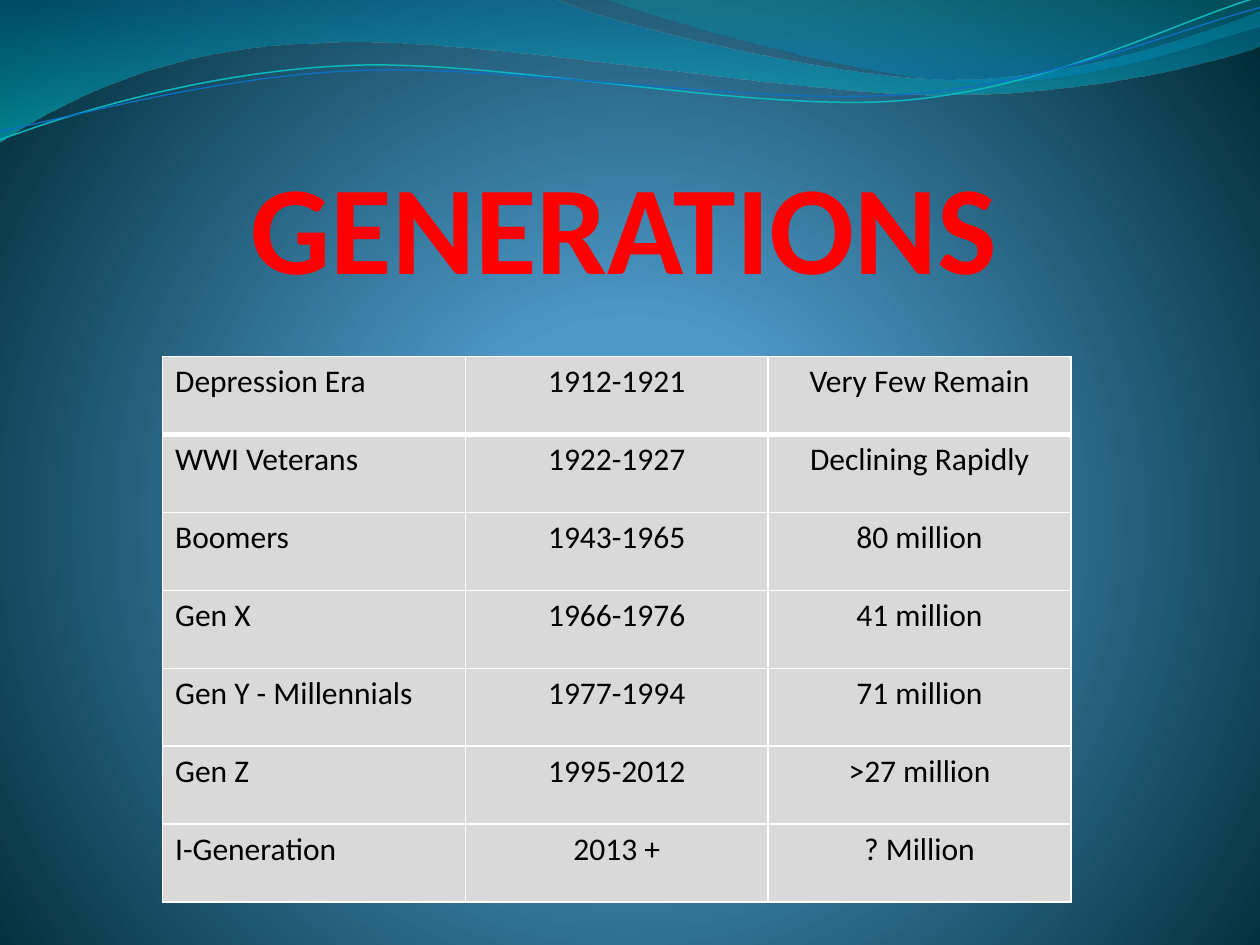
from math import cos, radians, sin

from pptx import Presentation
from pptx.dml.color import RGBColor
from pptx.enum.text import MSO_ANCHOR, PP_ALIGN
from pptx.oxml import parse_xml
from pptx.oxml.ns import nsdecls
from pptx.util import Inches, Pt

FONT = "Calibri"
COLORS = {
    "title": "FF0000", "text": "000000", "cell": "D9D9D9", "border": "FFFFFF",
    "glow": "4AA0D6", "sky": "4C98C7", "night": "002C38",
    "wave_blue": "0074A1", "wave_cyan": "00C6CF",
    "crest_teal": "00A1A9", "crest_blue": "008BBF",
    "line_teal": "0AB8BF", "line_blue": "0F6FC6",
}
ROWS = [
    ("Depression Era", "1912-1921", "Very Few Remain"),
    ("WWI Veterans", "1922-1927", "Declining Rapidly"),
    ("Boomers", "1943-1965", "80 million"),
    ("Gen X", "1966-1976", "41 million"),
    ("Gen Y - Millennials", "1977-1994", "71 million"),
    ("Gen Z", "1995-2012", ">27 million"),
    ("I-Generation", "2013 +", "? Million"),
]
LINE_ROTATION = 357.3
# Each outline is a list of points (a line) and six-number curves, in inches
WAVE = [(0, 0), (4.4, -0.01),
        (4.76, 0.17, 6.64, 0.63, 7.58, 0.63), (8.53, 0.63, 9.58, 0.26, 10, 0.09),
        (10.01, 0.36),
        (9.83, 0.44, 8.7, 0.76, 7.46, 0.75), (6.22, 0.75, 3.82, 0.28, 2.57, 0.34),
        (1.29, 0.36, 0.46, 0.83, -0.01, 1.13), (0, 0)]
CREST = [(4.79, -0.01),
         (5.09, 0.11, 6.82, 0.62, 7.69, 0.65), (8.56, 0.69, 9.61, 0.32, 10, 0.21),
         (10, 0), (4.79, -0.01)]
TEAL_LINE = [(0, 1.11),
             (0.48, 0.93, 1.58, 0.57, 2.77, 0.52), (3.95, 0.47, 5.93, 0.89, 7.13, 0.8),
             (8.33, 0.71, 9.38, 0.15, 9.98, -0.02)]
BLUE_LINE = [(0, 1.04),
             (0.47, 0.96, 1.64, 0.61, 2.83, 0.56), (4.03, 0.51, 5.97, 0.84, 7.17, 0.75),
             (8.36, 0.67, 9.41, 0.21, 10, 0.06)]


def color(name):
    return RGBColor.from_string(COLORS[name])


def set_gradient(fill, element, stops, direction):
    """Swap a solid fill for a gradient of (percent, color name, opacity) stops."""
    fill.solid()
    solid = element.xpath(".//a:solidFill")[0]
    stop_xml = "".join(
        f'<a:gs pos="{position * 1000}"><a:srgbClr val="{COLORS[name]}">'
        f'<a:alpha val="{opacity * 1000}"/></a:srgbClr></a:gs>'
        for position, name, opacity in stops)
    gradient = parse_xml(f'<a:gradFill {nsdecls("a")} rotWithShape="1">'
                         f"<a:gsLst>{stop_xml}</a:gsLst>{direction}</a:gradFill>")
    solid.getparent().replace(solid, gradient)


def outline_xml(outline, box, rotation, closed):
    """Curve commands relative to the box, with its rotation taken out."""
    left, top, width, height = box
    angle = radians(-rotation)
    commands = []
    for index, part in enumerate(outline):
        tag = "cubicBezTo" if len(part) == 6 else "lnTo" if index else "moveTo"
        points = ""
        for x, y in zip(part[::2], part[1::2]):
            across, down = x - left - width / 2, y - top - height / 2
            local_x = across * cos(angle) - down * sin(angle) + width / 2
            local_y = across * sin(angle) + down * cos(angle) + height / 2
            points += f'<a:pt x="{Inches(local_x)}" y="{Inches(local_y)}"/>'
        commands.append(f"<a:{tag}>{points}</a:{tag}>")
    return (f'<a:path {nsdecls("a")} w="{Inches(width)}" h="{Inches(height)}">'
            f'{"".join(commands)}{"<a:close/>" if closed else ""}</a:path>')


def add_outline(slide, outline, box, rotation=0, closed=False):
    builder = slide.shapes.build_freeform(0, 0)
    builder.add_line_segments([(Inches(1), Inches(1))], close=closed)
    shape = builder.convert_to_shape()
    shape.left, shape.top, shape.width, shape.height = map(Inches, box)
    shape.rotation = rotation
    shape.shadow.inherit = False
    segment = shape.element.xpath(".//a:pathLst/a:path")[0]
    segment.getparent().replace(
        segment, parse_xml(outline_xml(outline, box, rotation, closed)))
    return shape


def add_wave(slide, outline, box, stops):
    shape = add_outline(slide, outline, box, closed=True)
    shape.line.fill.background()
    set_gradient(shape.fill, shape.element, stops, '<a:lin ang="5400000" scaled="1"/>')


def add_wave_line(slide, outline, box, color_name, width):
    shape = add_outline(slide, outline, box, LINE_ROTATION)
    shape.fill.background()
    shape.line.color.rgb = color(color_name)
    shape.line.width = Pt(width)


def add_text(paragraph, text, size, color_name, bold, alignment):
    paragraph.alignment = alignment
    run = paragraph.add_run()
    run.text = text
    run.font.name = FONT
    run.font.size = Pt(size)
    run.font.bold = bold
    run.font.color.rgb = color(color_name)


def set_title(slide, text):
    title = slide.shapes.title
    title.left, title.top = Inches(0.67), Inches(0.33)
    title.width, title.height = Inches(8.59), Inches(2.05)
    frame = title.text_frame
    frame.vertical_anchor = MSO_ANCHOR.BOTTOM
    frame.margin_left = frame.margin_top = frame.margin_bottom = 0
    frame.margin_right = Inches(0.02)
    add_text(frame.paragraphs[0], text, 72, "title", True, PP_ALIGN.CENTER)
    # Bring the title in front of the waves
    title.element.getparent().append(title.element)


def set_borders(cell, top, bottom):
    """Draw the four cell borders; top and bottom are widths in points."""
    properties = cell._tc.get_or_add_tcPr()
    widths = {"lnL": 1, "lnR": 1, "lnT": top, "lnB": bottom}
    for index, (tag, width) in enumerate(widths.items()):
        properties.insert(index, parse_xml(
            f'<a:{tag} {nsdecls("a")} w="{Pt(width)}"><a:solidFill>'
            f'<a:srgbClr val="{COLORS["border"]}"/></a:solidFill></a:{tag}>'))


def add_generation_table(slide):
    table = slide.shapes.add_table(len(ROWS), len(ROWS[0]), Inches(1.29), Inches(2.83),
                                   Inches(7.21), Inches(4.33)).table
    for row_index, row in enumerate(ROWS):
        for column_index, text in enumerate(row):
            cell = table.cell(row_index, column_index)
            cell.fill.solid()
            cell.fill.fore_color.rgb = color("cell")
            # A heavier rule runs below the first row
            set_borders(cell, top=3 if row_index == 1 else 1,
                        bottom=3 if row_index == 0 else 1)
            alignment = PP_ALIGN.CENTER if column_index else PP_ALIGN.LEFT
            add_text(cell.text_frame.paragraphs[0], text, 18, "text", False, alignment)


def main():
    presentation = Presentation()
    presentation.slide_width, presentation.slide_height = Inches(10), Inches(7.5)
    slide = presentation.slides.add_slide(presentation.slide_layouts[5])

    # Background glow
    set_gradient(slide.background.fill, slide.element,
                 [(0, "glow", 100), (25, "sky", 100), (100, "night", 100)],
                 '<a:path path="circle"><a:fillToRect l="10000" t="110000" '
                 'r="10000" b="100000"/></a:path>')

    # Waves along the top
    add_wave(slide, WAVE, (-0.01, -0.01, 10.02, 1.14),
             [(0, "wave_blue", 45), (100, "wave_cyan", 55)])
    add_wave(slide, CREST, (4.79, -0.01, 5.21, 0.7),
             [(0, "crest_teal", 30), (80, "crest_blue", 45)])
    add_wave_line(slide, TEAL_LINE, (-0.02, 0.22, 10.02, 0.71), "line_teal", 0.85)
    add_wave_line(slide, BLUE_LINE, (-0.02, 0.3, 10.03, 0.58), "line_blue", 0.75)

    # Content
    set_title(slide, "GENERATIONS")
    add_generation_table(slide)
    presentation.save("out.pptx")


if __name__ == "__main__":
    main()
